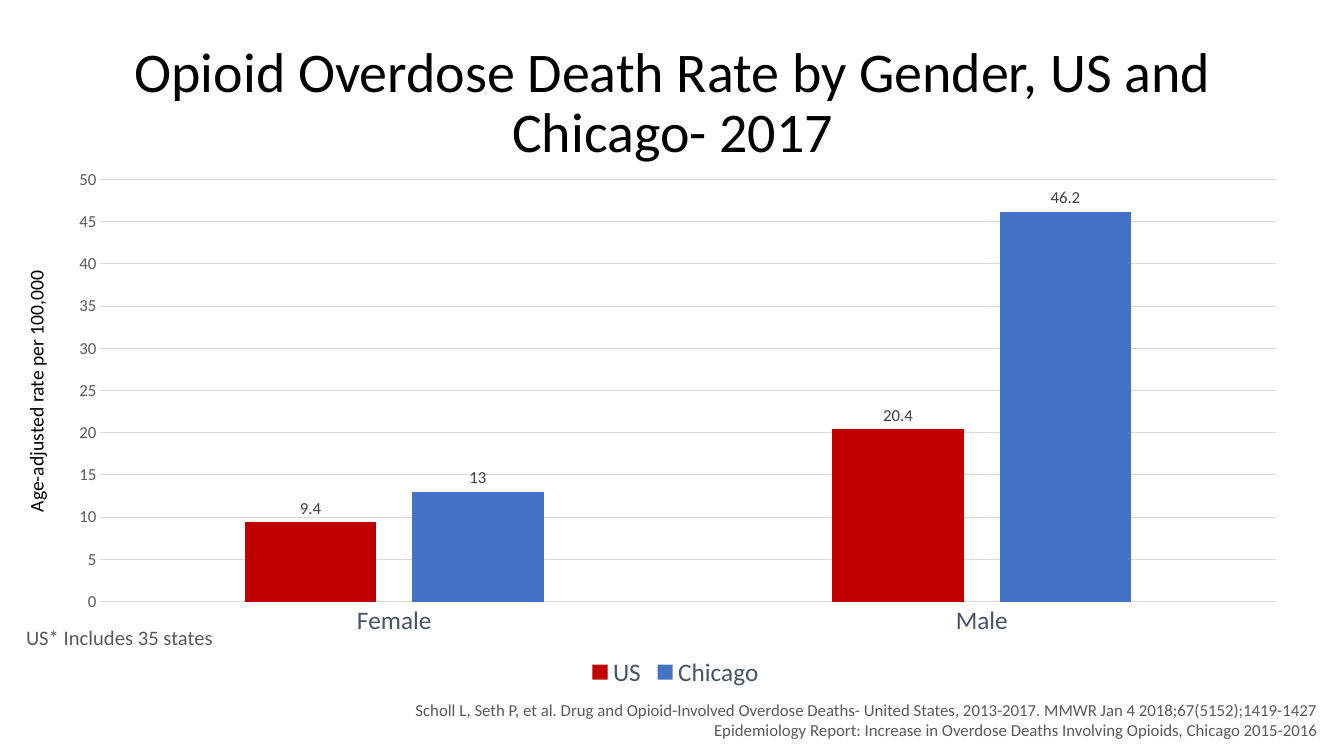
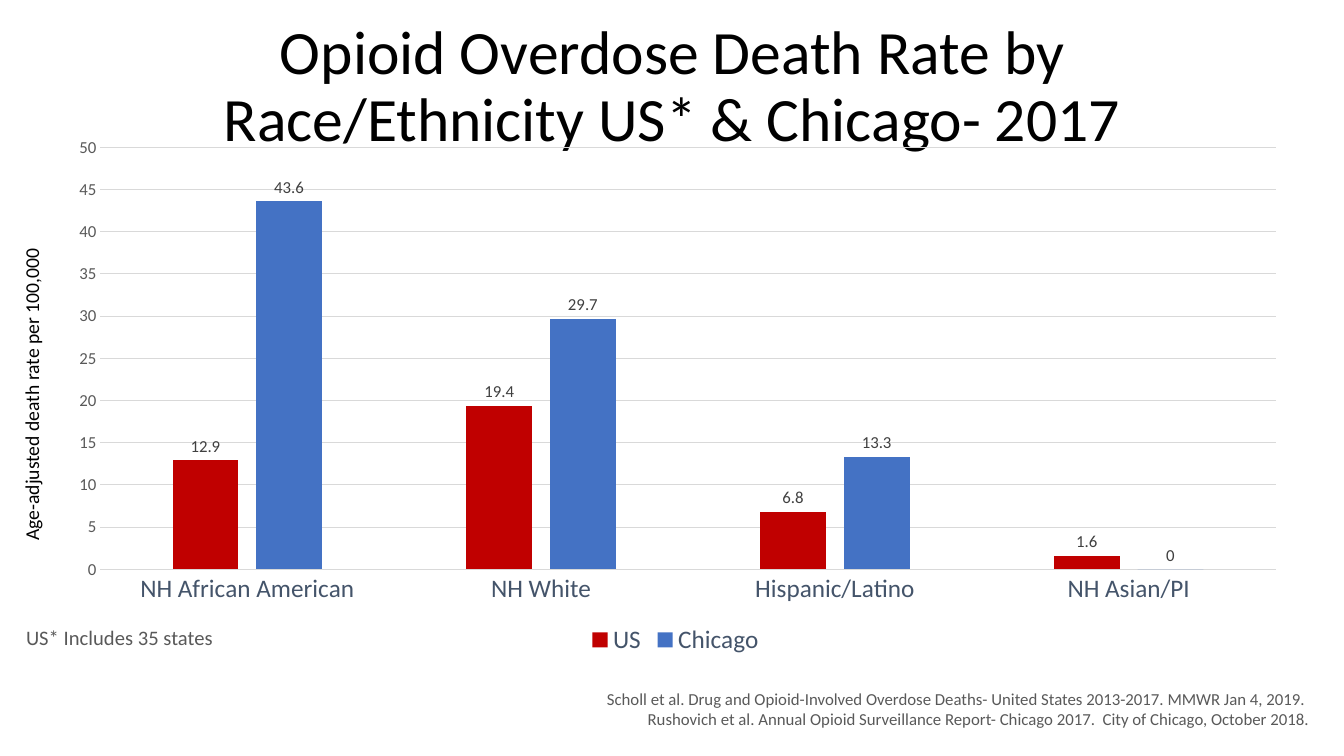
"""Build two slides comparing opioid overdose death rates in the US and Chicago."""

from dataclasses import dataclass

from lxml import etree
from pptx import Presentation
from pptx.chart.data import CategoryChartData
from pptx.dml.color import RGBColor
from pptx.enum.chart import XL_CHART_TYPE, XL_LABEL_POSITION, XL_LEGEND_POSITION, XL_TICK_MARK
from pptx.enum.text import MSO_ANCHOR, MSO_AUTO_SIZE, PP_ALIGN
from pptx.oxml.ns import qn
from pptx.util import Inches, Pt

COLUMNS = XL_CHART_TYPE.COLUMN_CLUSTERED
ABOVE_BAR = XL_LABEL_POSITION.OUTSIDE_END
LEGEND_BELOW = XL_LEGEND_POSITION.BOTTOM
NO_TICK = XL_TICK_MARK.NONE
MIDDLE, TOP = MSO_ANCHOR.MIDDLE, MSO_ANCHOR.TOP
GROW, FIXED = MSO_AUTO_SIZE.SHAPE_TO_FIT_TEXT, MSO_AUTO_SIZE.NONE
LEFT, CENTER, RIGHT = PP_ALIGN.LEFT, PP_ALIGN.CENTER, PP_ALIGN.RIGHT

FONT = "Calibri"
COLORS = {
    "ink": "000000",
    "muted": "595959",
    "value": "404040",
    "category": "44546A",
    "grid": "D9D9D9",
    "US": "C00000",
    "Chicago": "4472C4",
}
PLOT_AREA = {"x": 0.04, "y": 0.04, "w": 0.94, "h": 0.79}
FOOTNOTE = "US* Includes 35 states"


@dataclass(frozen=True)
class Box:
    """Position and size in inches."""

    left: float
    top: float
    width: float
    height: float


@dataclass(frozen=True)
class TextStyle:
    """Look and behaviour of a text box."""

    size: float
    color: str
    align: PP_ALIGN = LEFT
    anchor: MSO_ANCHOR = TOP
    autosize: MSO_AUTO_SIZE = GROW
    wrap: bool = False
    line_spacing: float = 1.0
    rotation: int = 0


@dataclass(frozen=True)
class RateSlide:
    """Content of one death rate slide."""

    title: str
    title_size: int
    title_top: float
    chart_top: float
    categories: tuple[str, ...]
    rates: dict[str, tuple[float, ...]]
    axis_label: str
    axis_label_box: Box
    sources: tuple[str, ...]
    sources_box: Box


FOOTNOTE_STYLE = TextStyle(14.7, "muted")
AXIS_LABEL_STYLE = TextStyle(14, "ink", rotation=270)
SOURCES_STYLE = TextStyle(12, "muted", align=RIGHT, wrap=True)

RATE_SLIDES = (
    RateSlide(
        title="Opioid Overdose Death Rate by Gender, US and Chicago- 2017",
        title_size=40,
        title_top=0.31,
        chart_top=1.57,
        categories=("Female", "Male"),
        rates={"US": (9.4, 20.4), "Chicago": (13, 46.2)},
        axis_label="Age-adjusted rate per 100,000",
        axis_label_box=Box(-0.95, 3.7, 2.62, 0.34),
        sources=(
            "Scholl L, Seth P, et al. Drug and Opioid-Involved Overdose Deaths- "
            "United States, 2013-2017. MMWR Jan 4 2018;67(5152);1419-1427",
            "Epidemiology Report: Increase in Overdose Deaths Involving Opioids, "
            "Chicago 2015-2016",
        ),
        sources_box=Box(1.29, 6.89, 11.88, 0.5),
    ),
    RateSlide(
        title="Opioid Overdose Death Rate by Race/Ethnicity US* & Chicago- 2017",
        title_size=44,
        title_top=0.15,
        chart_top=1.25,
        categories=("NH African American", "NH White", "Hispanic/Latino", "NH Asian/PI"),
        rates={"US": (12.9, 19.4, 6.8, 1.6), "Chicago": (43.6, 29.7, 13.3, 0)},
        axis_label="Age-adjusted death rate per 100,000",
        axis_label_box=Box(-1.25, 3.73, 3.13, 0.34),
        sources=(
            "Scholl et al. Drug and Opioid-Involved Overdose Deaths- "
            "United States 2013-2017. MMWR Jan 4, 2019. ",
            "Rushovich et al. Annual Opioid Surveillance Report- Chicago 2017.  "
            "City of Chicago, October 2018.",
        ),
        sources_box=Box(0.23, 6.78, 12.86, 0.5),
    ),
)


def rgb(name: str) -> RGBColor:
    """Return the named palette colour."""
    return RGBColor.from_string(COLORS[name])


def set_font(font, size: float, color: str) -> None:
    """Apply the shared typeface with a size and colour."""
    font.name = FONT
    font.size = Pt(size)
    font.color.rgb = rgb(color)


def set_line(line, color: str) -> None:
    """Give a chart line the shared thin stroke."""
    line.color.rgb = rgb(color)
    line.width = Pt(0.75)


def add_text(slide, box: Box, lines: tuple[str, ...], style: TextStyle) -> None:
    """Add a text box with one paragraph for each line."""
    holder = slide.shapes.add_textbox(
        Inches(box.left), Inches(box.top), Inches(box.width), Inches(box.height)
    )
    holder.rotation = style.rotation
    frame = holder.text_frame
    frame.word_wrap = style.wrap
    frame.auto_size = style.autosize
    frame.vertical_anchor = style.anchor
    for index, line in enumerate(lines):
        paragraph = frame.paragraphs[0] if index == 0 else frame.add_paragraph()
        paragraph.alignment = style.align
        paragraph.line_spacing = style.line_spacing
        run = paragraph.add_run()
        run.text = line
        set_font(run.font, style.size, style.color)


def fix_plot_area(chart) -> None:
    """Pin the inner plot area to shared fractions of the chart."""
    plot_area = chart.element.find(".//" + qn("c:plotArea"))
    layout = plot_area.find(qn("c:layout"))
    if layout is None:
        layout = etree.Element(qn("c:layout"))
        plot_area.insert(0, layout)
    manual = etree.SubElement(layout, qn("c:manualLayout"))
    settings = {"layoutTarget": "inner", "xMode": "edge", "yMode": "edge", **PLOT_AREA}
    for tag, value in settings.items():
        etree.SubElement(manual, qn(f"c:{tag}")).set("val", str(value))


def style_axes(chart) -> None:
    """Style both axes and the horizontal gridlines."""
    categories, rates = chart.category_axis, chart.value_axis
    for axis, size, color in ((categories, 18, "category"), (rates, 12, "muted")):
        axis.major_tick_mark = NO_TICK
        axis.minor_tick_mark = NO_TICK
        set_font(axis.tick_labels.font, size, color)
    categories.has_major_gridlines = False
    set_line(categories.format.line, "grid")
    rates.minimum_scale, rates.maximum_scale, rates.major_unit = 0, 50, 5
    rates.format.line.fill.background()
    set_line(rates.major_gridlines.format.line, "grid")


def add_rate_chart(slide, content: RateSlide) -> None:
    """Add the clustered columns of US and Chicago rates."""
    data = CategoryChartData()
    data.categories = content.categories
    for place, rates in content.rates.items():
        data.add_series(place, rates)
    chart = slide.shapes.add_chart(
        COLUMNS, Inches(0.5), Inches(content.chart_top), Inches(12.4), Inches(5.3), data
    ).chart
    set_font(chart.font, 10, "ink")
    chart.has_title = False
    chart.has_legend = True
    chart.legend.position = LEGEND_BELOW
    chart.legend.include_in_layout = False
    set_font(chart.legend.font, 18, "category")
    style_axes(chart)
    fix_plot_area(chart)

    plot = chart.plots[0]
    plot.gap_width, plot.overlap = 219, -27
    plot.vary_by_categories = False
    for series in plot.series:
        series.format.fill.solid()
        series.format.fill.fore_color.rgb = rgb(series.name)
        series.invert_if_negative = False
        labels = series.data_labels
        labels.show_value = True
        labels.position = ABOVE_BAR
        set_font(labels.font, 12, "value")


def add_rate_slide(deck, content: RateSlide) -> None:
    """Add one complete death rate slide."""
    slide = deck.slides.add_slide(deck.slide_layouts[6])
    title_style = TextStyle(
        content.title_size, "ink", CENTER, MIDDLE, FIXED, wrap=True, line_spacing=0.9
    )
    add_text(slide, Box(0.92, content.title_top, 11.5, 1.45), (content.title,), title_style)
    add_rate_chart(slide, content)
    add_text(slide, content.sources_box, content.sources, SOURCES_STYLE)
    add_text(slide, Box(0.16, 6.15, 2.06, 0.35), (FOOTNOTE,), FOOTNOTE_STYLE)
    add_text(slide, content.axis_label_box, (content.axis_label,), AXIS_LABEL_STYLE)


def main() -> None:
    """Build and save the presentation."""
    deck = Presentation()
    deck.slide_width, deck.slide_height = Inches(13.33), Inches(7.5)
    for content in RATE_SLIDES:
        add_rate_slide(deck, content)
    deck.save("out.pptx")


if __name__ == "__main__":
    main()
